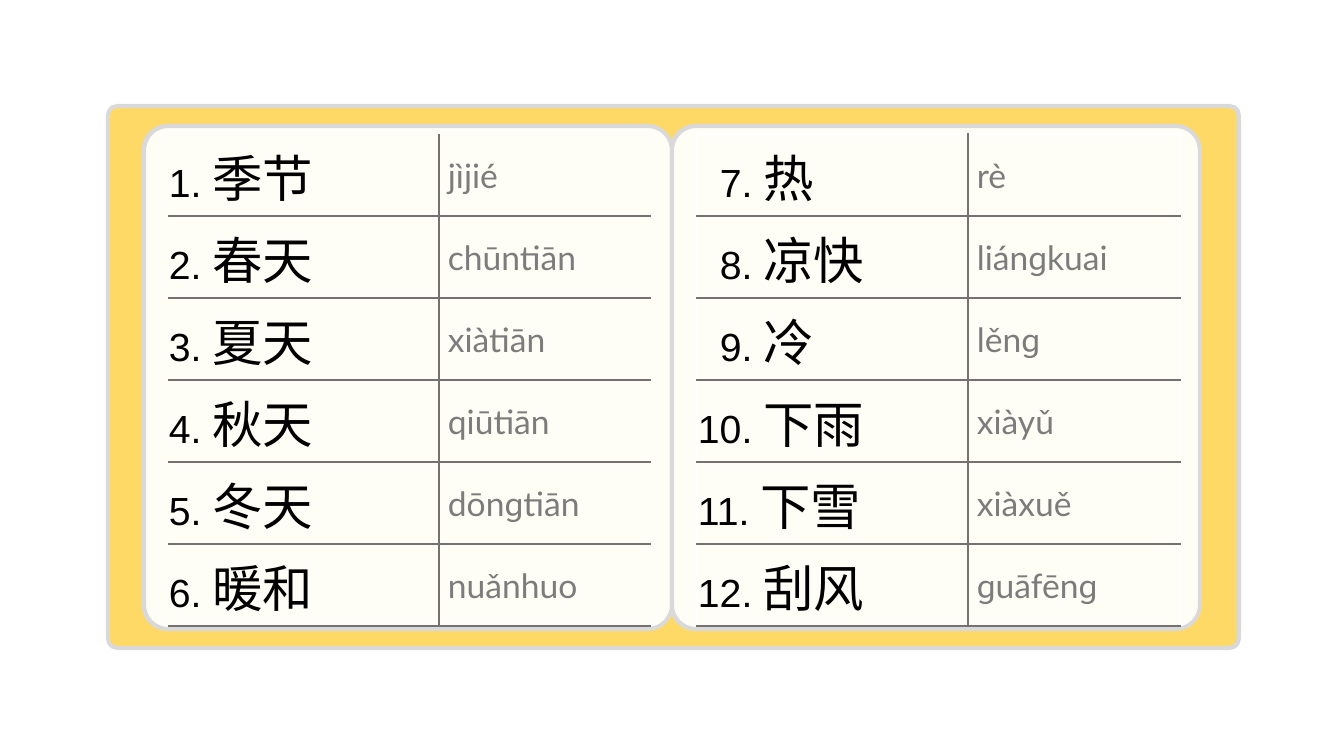
import dataclasses

import lxml.etree
import pptx
import pptx.dml.color
import pptx.enum.shapes
import pptx.enum.text
import pptx.oxml.ns
import pptx.util

PX = 914400 / 100.8  # EMU in one px
qn = pptx.oxml.ns.qn


@dataclasses.dataclass(frozen=True)
class Theme:
    card: str = "FFD966"
    panel: str = "FFFEF6"
    outline: str = "D9D9D9"
    rule: str = "767171"
    white: str = "FFFFFF"
    ink: str = "000000"
    pinyin: str = "7C7C7C"
    number_font: str = "Arial"
    hanzi_font: str = "Noto Sans CJK SC"
    pinyin_font: str = "Lato"
    number_size: int = 28
    hanzi_size: int = 36
    pinyin_size: int = 24
    outline_width: int = 3
    rule_width: int = 1


THEME = Theme()

WORDS = [
    ("季节", "jìjié"), ("春天", "chūntiān"), ("夏天", "xiàtiān"),
    ("秋天", "qiūtiān"), ("冬天", "dōnɡtiān"), ("暖和", "nuǎnhuo"),
    ("热", "rè"), ("凉快", "liánɡkuai"), ("冷", "lěnɡ"),
    ("下雨", "xiàyǔ"), ("下雪", "xiàxuě"), ("刮风", "ɡuāfēnɡ"),
]
ROWS = 6
ROW_HEIGHT = 82
COLUMNS = (271, 212)
PANEL_LEFT, PANEL_WIDTH = 144, 528
TABLE_TOP, TABLE_LEFTS = 134, (168, 697)
DIGIT_INDENT = 22  # lines up one-digit numbers with two-digit ones
PINYIN_INSET = 9


def px(n):
    return pptx.util.Emu(round(n * PX))


def rgb(color):
    return pptx.dml.color.RGBColor.from_string(color)


def add_card(shapes, left, top, width, height, fill, radius):
    kind = pptx.enum.shapes.MSO_SHAPE.ROUNDED_RECTANGLE
    sp = shapes.add_shape(kind, px(left), px(top), px(width), px(height))
    sp.adjustments[0] = radius
    sp.shadow.inherit = False
    sp.fill.solid()
    sp.fill.fore_color.rgb = rgb(fill)
    sp.line.color.rgb = rgb(THEME.outline)
    sp.line.width = pptx.util.Pt(THEME.outline_width)


def add_run(p, text, font, size, color):
    r = p.add_run()
    r.text = text
    r.font.name = font
    r.font.size = pptx.util.Pt(size)
    r.font.color.rgb = rgb(color)
    lxml.etree.SubElement(r.font._element, qn("a:ea"), typeface=font)


def set_borders(cell, left, right, top, bottom):
    """Colour the four borders; None means no line."""
    tc_pr = cell._tc.get_or_add_tcPr()
    for side, color in zip("LRTB", (left, right, top, bottom)):
        width = pptx.util.Pt(THEME.rule_width)
        ln = lxml.etree.SubElement(tc_pr, qn("a:ln" + side), w=str(width))
        if color is None:
            lxml.etree.SubElement(ln, qn("a:noFill"))
        else:
            solid = lxml.etree.SubElement(ln, qn("a:solidFill"))
            lxml.etree.SubElement(solid, qn("a:srgbClr"), val=color)


def prepare_cell(cell, borders, inset):
    set_borders(cell, *borders)
    cell.fill.background()
    cell.vertical_anchor = pptx.enum.text.MSO_ANCHOR.MIDDLE
    cell.margin_left = px(inset)
    cell.margin_right = cell.margin_top = px(1)
    cell.margin_bottom = 0
    return cell.text_frame.paragraphs[0]


def add_word_table(s, left, first, edge):
    """Table of ROWS words from number first, with outer borders in edge."""
    frame = s.shapes.add_table(ROWS, 2, px(left), px(TABLE_TOP),
                               px(sum(COLUMNS)), px(ROWS * ROW_HEIGHT))
    table = frame.table
    table.first_row = table.horz_banding = False
    for column, width in zip(table.columns, COLUMNS):
        column.width = px(width)
    for i, row in enumerate(table.rows):
        row.height = px(ROW_HEIGHT)
        number = first + i
        hanzi, pinyin = WORDS[number - 1]
        top = THEME.rule if i else edge

        # Number and characters
        p = prepare_cell(row.cells[0], (edge, THEME.rule, top, THEME.rule), 1)
        if 7 <= number <= 9:
            p._p.get_or_add_pPr().set("marL", str(px(DIGIT_INDENT)))
        add_run(p, f"{number}. ", THEME.number_font, THEME.number_size, THEME.ink)
        add_run(p, hanzi, THEME.hanzi_font, THEME.hanzi_size, THEME.ink)

        # Pinyin
        p = prepare_cell(row.cells[1], (THEME.rule, edge, top, THEME.rule),
                         PINYIN_INSET)
        add_run(p, pinyin, THEME.pinyin_font, THEME.pinyin_size, THEME.pinyin)


def main():
    prs = pptx.Presentation()
    prs.slide_width, prs.slide_height = px(1344), px(756)
    s = prs.slides.add_slide(prs.slide_layouts[6])

    # Yellow card with two panels
    cards = s.shapes.add_group_shape().shapes
    add_card(cards, 108, 106, 1131, 542, THEME.card, 0.018)
    for i in range(2):
        add_card(cards, PANEL_LEFT + i * PANEL_WIDTH, 126, PANEL_WIDTH, 503,
                 THEME.panel, 0.048)

    # Word lists
    for i, (left, edge) in enumerate(zip(TABLE_LEFTS, (None, THEME.white))):
        add_word_table(s, left, i * ROWS + 1, edge)

    prs.save("out.pptx")


if __name__ == "__main__":
    main()
